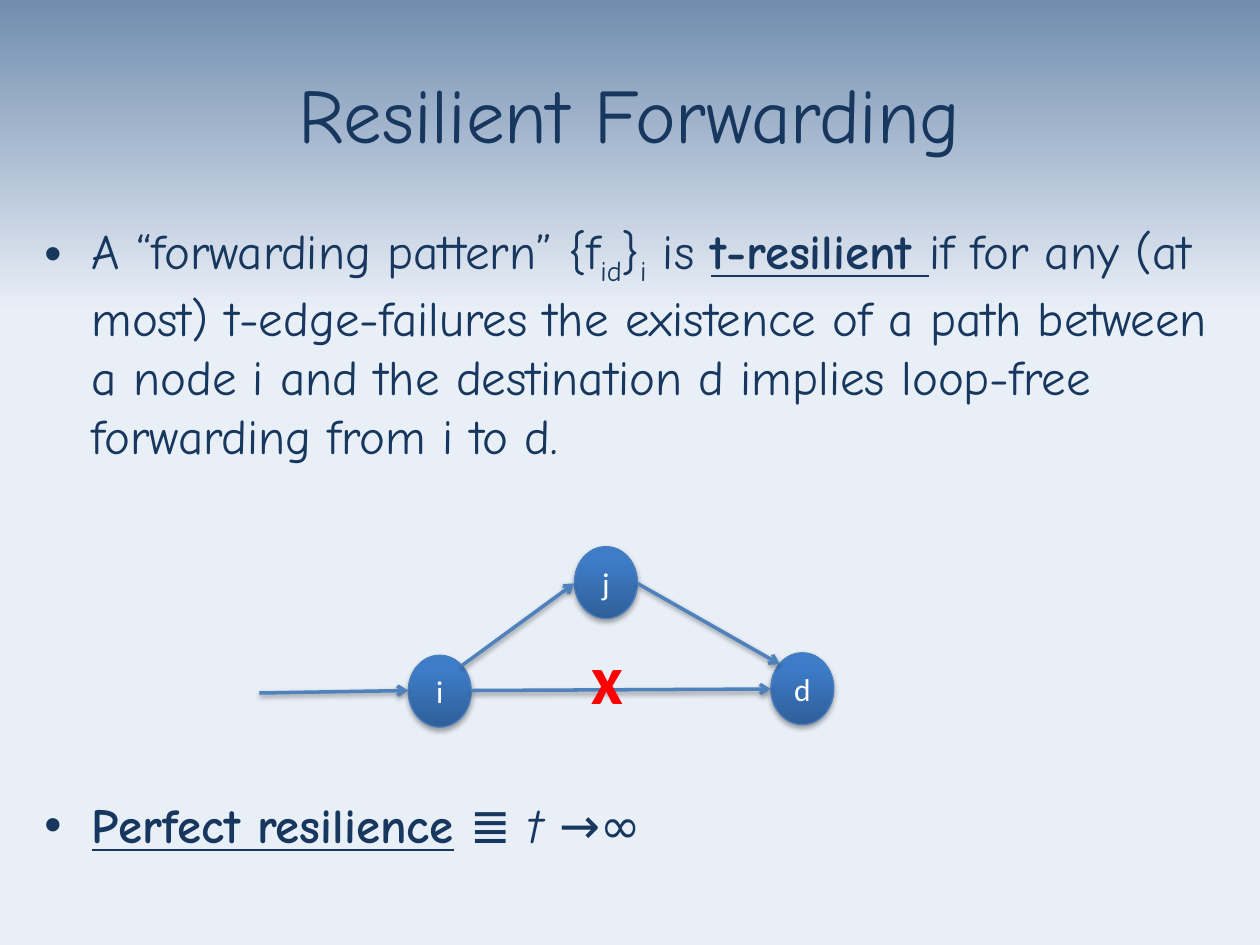
from lxml.etree import SubElement
from pptx import Presentation
from pptx.dml.color import RGBColor
from pptx.enum.shapes import MSO_CONNECTOR, MSO_SHAPE
from pptx.enum.text import MSO_ANCHOR, MSO_AUTO_SIZE, PP_ALIGN
from pptx.oxml.ns import qn
from pptx.util import Cm, Pt


def color(value):
    return RGBColor.from_string(value)


def add_shadow(shape, opacity, distance):
    effects = SubElement(shape.element.spPr, qn("a:effectLst"))
    shadow = SubElement(effects, qn("a:outerShdw"), blurRad=str(Pt(3.1)),
                        dist=str(Pt(distance)), dir="5400000", rotWithShape="0")
    black = SubElement(shadow, qn("a:srgbClr"), val="000000")
    SubElement(black, qn("a:alpha"), val=str(opacity * 1000))


deck = Presentation()
deck.slide_width, deck.slide_height = Cm(25.4), Cm(19.05)
page = deck.slides.add_slide(deck.slide_layouts[1])
title, body = page.placeholders

# Background and node gradients share one form: angle, then (position, colour)
BACKGROUND = (270, [(0, "718DAF"), (0.33, "E9EFF7")])
NODE = (90, [(0, "2F5F99"), (0.8, "3D7CC7")])
fills = [(page.background.fill, BACKGROUND)]

# Placeholder positions
for box, frame in ((title, (1.27, 0.69, 22.86, 3.18)),
                   (body, (0.64, 4.32, 24.33, 7.7))):
    box.left, box.top, box.width, box.height = [Cm(n) for n in frame]
    box.text_frame.auto_size = MSO_AUTO_SIZE.NONE

# Title and list text
BOLD = {"bold": True, "underline": True}
definition = [
    ("A “forwarding pattern” {f", {}), ("id", "sub"), ("}", {}), ("i", "sub"),
    (" is ", {}), ("t-resilient ", BOLD),
    ("if for any (at most) t-edge-failures the existence of a path between "
     "a node i and the destination d implies loop-free forwarding from i to d.", {}),
]
perfect = [("Perfect resilience", BOLD), (" ≣ ", {}),
           ("t ", {"italic": True}), ("→∞", {})]
heading = title.text_frame.paragraphs[0]
first = body.text_frame.paragraphs[0]
second = body.text_frame.add_paragraph()
second.space_before = Pt(189)
for para, size, parts in ((heading, 44, [("Resilient Forwarding", {})]),
                          (first, 28, definition), (second, 28, perfect)):
    for text, style in parts:
        span = para.add_run()
        span.text = text
        span.font.color.rgb = color("17375E")
        formats = {"name": "Comic Neue", "size": Pt(size)}
        if style == "sub":
            span.font._element.set("baseline", "-25000")
        else:
            formats.update(style)
        for name, value in formats.items():
            setattr(span.font, name, value)

# Network nodes
nodes = []
for label, left, top in (("i", 8.23, 13.21), ("d", 15.54, 13.16), ("j", 11.58, 11.02)):
    node = page.shapes.add_shape(MSO_SHAPE.OVAL, Cm(left), Cm(top), Cm(1.27), Cm(1.45))
    nodes.append(node)
    fills.append((node.fill, NODE))
    node.line.color.rgb = color("4B7EBC")
    node.line.width = Pt(0.75)
    node.text_frame.vertical_anchor = MSO_ANCHOR.MIDDLE
    para = node.text_frame.paragraphs[0]
    para.alignment = PP_ALIGN.CENTER
    span = para.add_run()
    span.text = label
    span.font.name, span.font.size = "Calibri", Pt(18)
    span.font.color.rgb = color("FFFFFF")

# Gradients, then node shadows, which follow fill and line
for fill, (angle, stops) in fills:
    fill.gradient()
    fill.gradient_angle = angle
    for stop, (position, value) in zip(fill.gradient_stops, stops):
        stop.position = position
        stop.color.rgb = color(value)
for node in nodes:
    add_shadow(node, 35, 1.8)

# Arrows: into i, i to d, i to j, j to d
for ends in ((5.23, 13.97, 8.23, 13.92), (9.5, 13.92, 15.54, 13.89),
             (9.32, 13.41, 11.58, 11.76), (12.85, 11.76, 15.72, 13.39)):
    arrow = page.shapes.add_connector(MSO_CONNECTOR.STRAIGHT, *[Cm(n) for n in ends])
    arrow.line.color.rgb = color("4F81BD")
    arrow.line.width = Pt(2)
    SubElement(arrow.element.spPr.find(qn("a:ln")), qn("a:tailEnd"), type="arrow")
    add_shadow(arrow, 38, 1.6)

# Failed edge mark
mark = page.shapes.add_textbox(Cm(11.66), Cm(12.67), Cm(1.17), Cm(1.96))
mark.text_frame.word_wrap = False
span = mark.text_frame.paragraphs[0].add_run()
span.text = "x"
for name, value in {"name": "Calibri", "size": Pt(40), "bold": True}.items():
    setattr(span.font, name, value)
span.font.color.rgb = color("FF0000")

deck.save("out.pptx")
